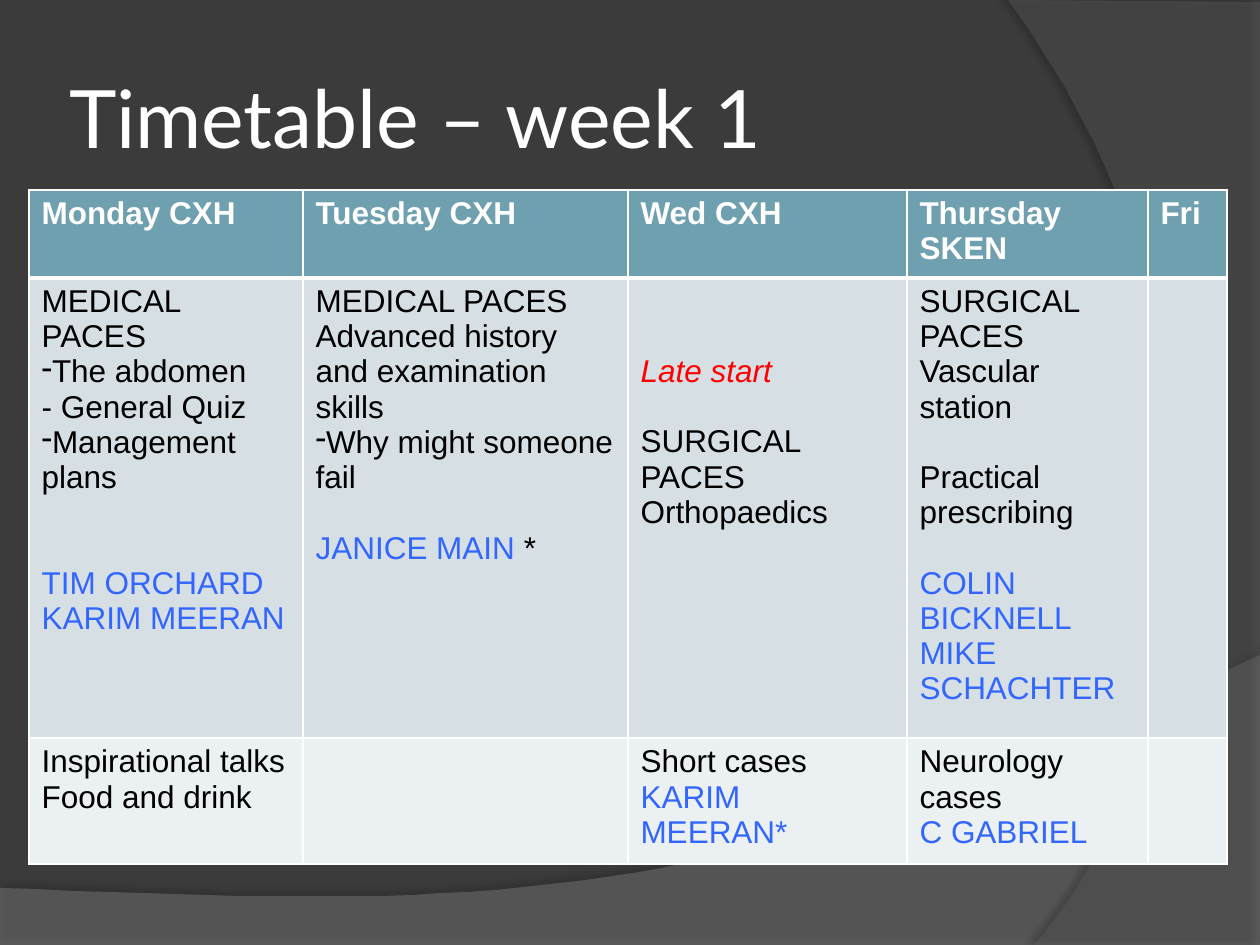
from lxml import etree
from pptx import Presentation
from pptx import util as u
from pptx.dml import color
from pptx.enum import text
from pptx.oxml import ns

PX = 914400 / 126


def rgb(value):
    return color.RGBColor.from_string(value)


def add_xml(parent, tag, **attributes):
    return etree.SubElement(parent, ns.qn(tag), attributes)


deck = Presentation()
deck.slide_width, deck.slide_height = round(1260 * PX), round(945 * PX)
slide = deck.slides.add_slide(deck.slide_layouts[6])
slide.background.fill.solid()
slide.background.fill.fore_color.rgb = rgb("3B3B3B")

swooshes = [
    {"curve": [(1260, 655), (704, 919), (493, 906), (0, 888)],
     "corners": [(0, 945), (1260, 945)],
     "fill": "7F7F7F", "alpha": 45, "shade": 35, "distance": 3.5, "angle": 270},
    {"curve": [(1034, 945), (1178, 780), (1283, 378), (1008, 0)],
     "corners": [(1260, 2), (1260, 945)],
     "fill": "5E5E5E", "alpha": 40, "shade": 45, "distance": 4, "angle": 180},
]
STEPS = 40
for swoosh in swooshes:
    edge = []
    for step in range(STEPS + 1):
        t = step / STEPS
        weights = ((1 - t) ** 3, 3 * t * (1 - t) ** 2, 3 * t * t * (1 - t), t ** 3)
        edge.append([sum(w * point[axis] for w, point in zip(weights, swoosh["curve"]))
                     for axis in (0, 1)])
    outline = slide.shapes.build_freeform(*edge[0], scale=PX)
    outline.add_line_segments(edge[1:] + swoosh["corners"], close=True)
    band = outline.convert_to_shape()
    band.fill.solid()
    band.fill.fore_color.rgb = rgb(swoosh["fill"])
    band.line.fill.background()
    band.shadow.inherit = False
    properties = band._element.spPr
    tint = properties.find(".//" + ns.qn("a:srgbClr"))
    add_xml(tint, "a:alpha", val=str(swoosh["alpha"] * 1000))
    shadow = add_xml(properties.find(ns.qn("a:effectLst")), "a:outerShdw",
                     blurRad=str(u.Pt(4)), dist=str(u.Pt(swoosh["distance"])),
                     dir=str(swoosh["angle"] * 60000), algn="ctr", rotWithShape="0")
    shade = add_xml(shadow, "a:srgbClr", val="000000")
    add_xml(shade, "a:alpha", val=str(swoosh["shade"] * 1000))

title = slide.shapes.add_textbox(*(round(n * PX) for n in (63, 38, 1029, 157))).text_frame
title_format = {"word_wrap": True, "vertical_anchor": text.MSO_ANCHOR.MIDDLE,
                "margin_left": round(6 * PX), "margin_right": round(6 * PX),
                "margin_top": round(6 * PX), "margin_bottom": round(6 * PX)}
for name, value in title_format.items():
    setattr(title, name, value)
heading = title.paragraphs[0].add_run()
heading.text = "Timetable – week 1"
for name, value in {"name": "Lato", "size": u.Pt(46)}.items():
    setattr(heading.font, name, value)
heading.font.color.rgb = rgb("FFFFFF")

styles = {
    "day": ("FFFFFF", {"bold": True}),
    "topic": ("000000", {"bold": False}),
    "bullet": ("000000", {"bold": False}),
    "teacher": ("3366FF", {"bold": False}),
    "notice": ("FF0000", {"bold": False, "italic": True}),
}
days = [[(0, ("day", day))] for day in
        ("Monday CXH", "Tuesday CXH", "Wed CXH", "Thursday SKEN", "Fri")]
mornings = [
    [(0, ("topic", "MEDICAL PACES")), (0, ("bullet", "The abdomen")),
     (0, ("topic", "- General Quiz")), (0, ("bullet", "Management plans")),
     (2, ("teacher", "TIM ORCHARD")), (0, ("teacher", "KARIM MEERAN"))],
    [(0, ("topic", "MEDICAL PACES")),
     (0, ("topic", "Advanced history and examination skills")),
     (0, ("bullet", "Why might someone fail")),
     (1, ("teacher", "JANICE MAIN "), ("topic", "*"))],
    [(2, ("notice", "Late start")), (1, ("topic", "SURGICAL PACES")),
     (0, ("topic", "Orthopaedics"))],
    [(0, ("topic", "SURGICAL PACES")), (0, ("topic", "Vascular station")),
     (1, ("topic", "Practical prescribing")),
     (1, ("teacher", "COLIN BICKNELL")), (0, ("teacher", "MIKE SCHACHTER"))],
    [],
]
afternoons = [
    [(0, ("topic", "Inspirational talks")), (0, ("topic", "Food and drink"))],
    [],
    [(0, ("topic", "Short cases")), (0, ("teacher", "KARIM MEERAN*"))],
    [(0, ("topic", "Neurology cases")), (0, ("teacher", "C GABRIEL"))],
    [],
]
sessions = [(84, "6EA0B0", days), (436, "D5DFE4", mornings), (118, "EBF0F2", afternoons)]
widths = [274, 325, 279, 241, 79]
LINE = 35

timetable = slide.shapes.add_table(
    len(sessions), len(widths), round(29 * PX), round(190 * PX), round(sum(widths) * PX),
    round(sum(height for height, _, _ in sessions) * PX)).table
timetable.first_row = timetable.horz_banding = False
for column, width in zip(timetable.columns, widths):
    column.width = round(width * PX)

for row, (height, fill, entries) in enumerate(sessions):
    timetable.rows[row].height = round(height * PX)
    for column, lines in enumerate(entries):
        cell = timetable.cell(row, column)
        cell.fill.solid()
        cell.fill.fore_color.rgb = rgb(fill)
        thickness = {"L": 1, "R": 1, "T": 3 if row == 1 else 1, "B": 3 if row == 0 else 1}
        borders = cell._tc.get_or_add_tcPr()
        for place, (side, points) in enumerate(thickness.items()):
            border = add_xml(borders, "a:ln" + side, w=str(u.Pt(points)))
            add_xml(add_xml(border, "a:solidFill"), "a:srgbClr", val="FFFFFF")
            borders.insert(place, border)
        for index, (gap, *pieces) in enumerate(lines):
            frame = cell.text_frame
            paragraph = frame.add_paragraph() if index else frame.paragraphs[0]
            if index:
                paragraph.space_before = round(gap * LINE * PX)
            else:
                cell.margin_top = round((6 + gap * LINE) * PX)
            if pieces[0][0] == "bullet":
                layout = paragraph._p.get_or_add_pPr()
                layout.set("marL", "0")
                layout.set("indent", "0")
                add_xml(layout, "a:buFontTx")
                add_xml(layout, "a:buChar", char="-")
            for style, words in pieces:
                run = paragraph.add_run()
                run.text = words
                ink, emphasis = styles[style]
                for name, value in {"name": "Arial", "size": u.Pt(18), **emphasis}.items():
                    setattr(run.font, name, value)
                run.font.color.rgb = rgb(ink)

deck.save("out.pptx")
